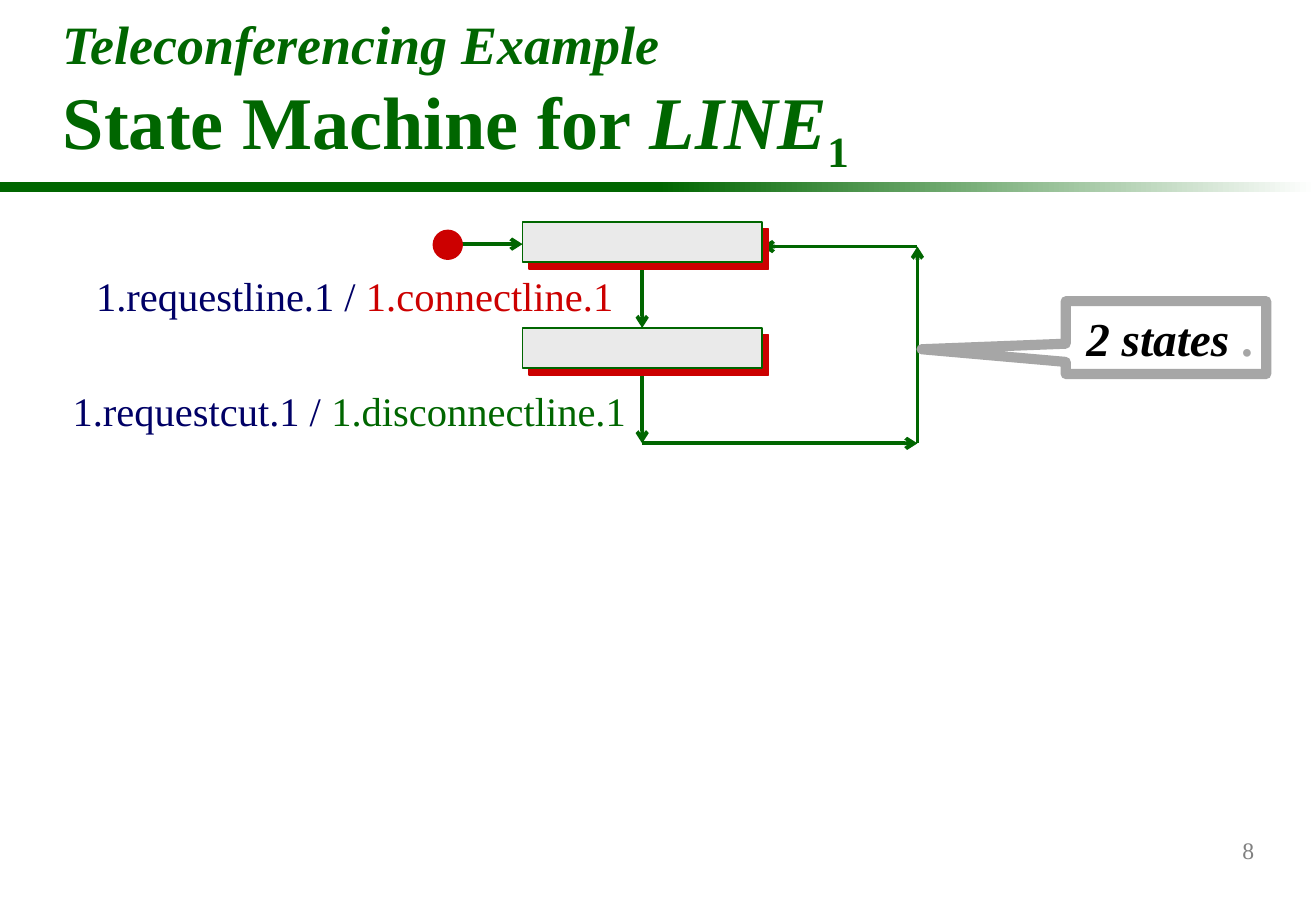
from lxml import etree
from pptx import Presentation
from pptx.dml.color import RGBColor
from pptx.enum.shapes import MSO_CONNECTOR, MSO_SHAPE
from pptx.enum.text import MSO_ANCHOR, PP_ALIGN
from pptx.oxml.ns import qn
from pptx.util import Inches, Pt

GREEN = RGBColor(0x00, 0x66, 0x00)
RED = RGBColor(0xCC, 0x00, 0x00)
NAVY = RGBColor(0x00, 0x00, 0x66)
BLACK = RGBColor(0x00, 0x00, 0x00)
WHITE = RGBColor(0xFF, 0xFF, 0xFF)
PALE = RGBColor(0xEA, 0xEA, 0xEA)
SILVER = RGBColor(0xA6, 0xA6, 0xA6)
GRAY = RGBColor(0x80, 0x80, 0x80)
FONT_NAME = "Times New Roman"
RECTANGLE, ELLIPSE = MSO_SHAPE.RECTANGLE, MSO_SHAPE.OVAL
CALLOUT = MSO_SHAPE.RECTANGULAR_CALLOUT
STRAIGHT = MSO_CONNECTOR.STRAIGHT
LEFT, RIGHT = PP_ALIGN.LEFT, PP_ALIGN.RIGHT
TOP, MIDDLE, BOTTOM = MSO_ANCHOR.TOP, MSO_ANCHOR.MIDDLE, MSO_ANCHOR.BOTTOM
SLIDE_WIDTH, SLIDE_HEIGHT = 10.83, 7.5
STATE_WIDTH, STATE_HEIGHT = 1.97, 0.33


def add_runs(paragraph, runs):
    """Append (text, colour, font values) runs to a paragraph."""
    for text, color, values in runs:
        run = paragraph.add_run()
        run.text = text
        run.font.name = FONT_NAME
        run.font.color.rgb = color
        for name, value in values.items():
            setattr(run.font, name, value)


def add_text(slide, box, lines, alignment=LEFT, anchor=TOP):
    """Add a wrapped text box whose lines are split by line breaks."""
    text_frame = slide.shapes.add_textbox(*map(Inches, box)).text_frame
    text_frame.word_wrap = True
    text_frame.vertical_anchor = anchor
    paragraph = text_frame.paragraphs[0]
    paragraph.alignment = alignment
    for index, runs in enumerate(lines):
        if index:
            paragraph.add_line_break()
        add_runs(paragraph, runs)
    return paragraph


def add_shape(slide, kind, box, fill, line=None, width=1):
    """Add a flat shape with an optional outline."""
    shape = slide.shapes.add_shape(kind, *map(Inches, box))
    shape.shadow.inherit = False
    shape.fill.solid()
    shape.fill.fore_color.rgb = fill
    if line is None:
        shape.line.fill.background()
    else:
        shape.line.color.rgb = line
        shape.line.width = Pt(width)
    return shape


def add_arrow(slide, start, end):
    """Add a green transition arrow between two points."""
    arrow = slide.shapes.add_connector(STRAIGHT, *map(Inches, (*start, *end)))
    arrow.line.color.rgb = GREEN
    arrow.line.width = Pt(2.25)
    etree.SubElement(arrow.line._get_or_add_ln(), qn("a:tailEnd"), type="arrow")
    etree.SubElement(arrow._element.spPr, qn("a:effectLst"))


def add_state(slide, left, top):
    """Add a state box with a hard red shadow."""
    box = (left, top, STATE_WIDTH, STATE_HEIGHT)
    state = add_shape(slide, RECTANGLE, box, PALE, GREEN)
    effects = state._element.spPr.find(qn("a:effectLst"))
    shadow = etree.SubElement(effects, qn("a:outerShdw"), dist=str(Pt(5.7)),
                              dir="2700000", algn="ctr", rotWithShape="0")
    etree.SubElement(shadow, qn("a:srgbClr"), val=str(RED))


def add_header(slide, left, top, width, height):
    """Add the two-line title and the fading rule below it."""
    half, rule_height = width / 2, 0.08
    rule_top = top + height
    add_shape(slide, RECTANGLE, (left, rule_top, half, rule_height), GREEN)
    fade = add_shape(slide, RECTANGLE,
                     (left + half, rule_top, half, rule_height), GREEN)
    fade.fill.gradient()
    fade.fill.gradient_angle = 0
    for stop, color, position in zip(fade.fill.gradient_stops, (GREEN, WHITE), (0, 1)):
        stop.color.rgb = color
        stop.position = position
    large = {"size": Pt(44), "bold": True}
    add_text(slide, (left + 0.42, top, 10, height), [
        [("Teleconferencing Example ", GREEN,
          {"size": Pt(32), "bold": True, "italic": True})],
        [("State Machine for ", GREEN, large),
         ("LINE", GREEN, {**large, "italic": True}),
         ("1", GREEN, large)],
    ], anchor=BOTTOM).runs[-1].font._element.set("baseline", "-25000")


def add_state_machine(slide, left, top):
    """Add both states, their transitions and the transition labels."""
    state_left, second_top = left + 0.74, top + 0.87
    middle = state_left + STATE_WIDTH / 2
    loop_right, loop_top, loop_bottom = left + 3.99, top + 0.2, top + 1.82
    corners = [(middle, second_top + STATE_HEIGHT), (middle, loop_bottom),
               (loop_right, loop_bottom), (loop_right, loop_top),
               (state_left + STATE_WIDTH, loop_top)]
    for start, end in zip(corners, corners[1:]):
        add_arrow(slide, start, end)
    add_arrow(slide, (middle, top + STATE_HEIGHT), (middle, second_top))

    size = {"size": Pt(24)}
    labels = [
        (5.23, 0.35, "1.requestline.1 / ", "1.connectline.1 ", RED),
        (5.25, 1.3, "1.requestcut.1 / ", "1.disconnectline.1", GREEN),
    ]
    for right, offset, event, action, color in labels:
        add_text(slide, (right - 4.97, top + offset, 4.97, 0.51),
                 [[(event, NAVY, size), (action, color, size)]], RIGHT)

    for state_top in (top, second_top):
        add_state(slide, state_left, state_top)
    add_arrow(slide, (left + 0.19, top + 0.18), (state_left, top + 0.18))
    add_shape(slide, ELLIPSE, (left, top + 0.06, 0.25, 0.25), RED)


def add_callout(slide, left, top, width, height):
    """Add the callout that points at the loop."""
    callout = add_shape(slide, CALLOUT, (left, top, width, height), WHITE, SILVER, 6)
    callout.adjustments[0], callout.adjustments[1] = -1.219, 0.16
    text_frame = callout.text_frame
    text_frame.vertical_anchor = MIDDLE
    text_frame.margin_left, text_frame.margin_right = Inches(0.17), 0
    paragraph = text_frame.paragraphs[0]
    paragraph.alignment = LEFT
    bold = {"size": Pt(28), "bold": True}
    add_runs(paragraph, [("2 states ", BLACK, {**bold, "italic": True}),
                         (".", SILVER, bold)])


def main():
    """Build and save the slide."""
    presentation = Presentation()
    presentation.slide_width = Inches(SLIDE_WIDTH)
    presentation.slide_height = Inches(SLIDE_HEIGHT)
    slide = presentation.slides.add_slide(presentation.slide_layouts[6])
    add_header(slide, 0, 0, SLIDE_WIDTH, 1.5)
    add_state_machine(slide, 3.56, 1.83)
    add_callout(slide, 8.77, 2.48, 1.65, 0.6)
    add_text(slide, (8.16, 6.75, 2.26, 0.5),
             [[("8", GRAY, {"size": Pt(14)})]], RIGHT, MIDDLE)
    presentation.save("out.pptx")


if __name__ == "__main__":
    main()
